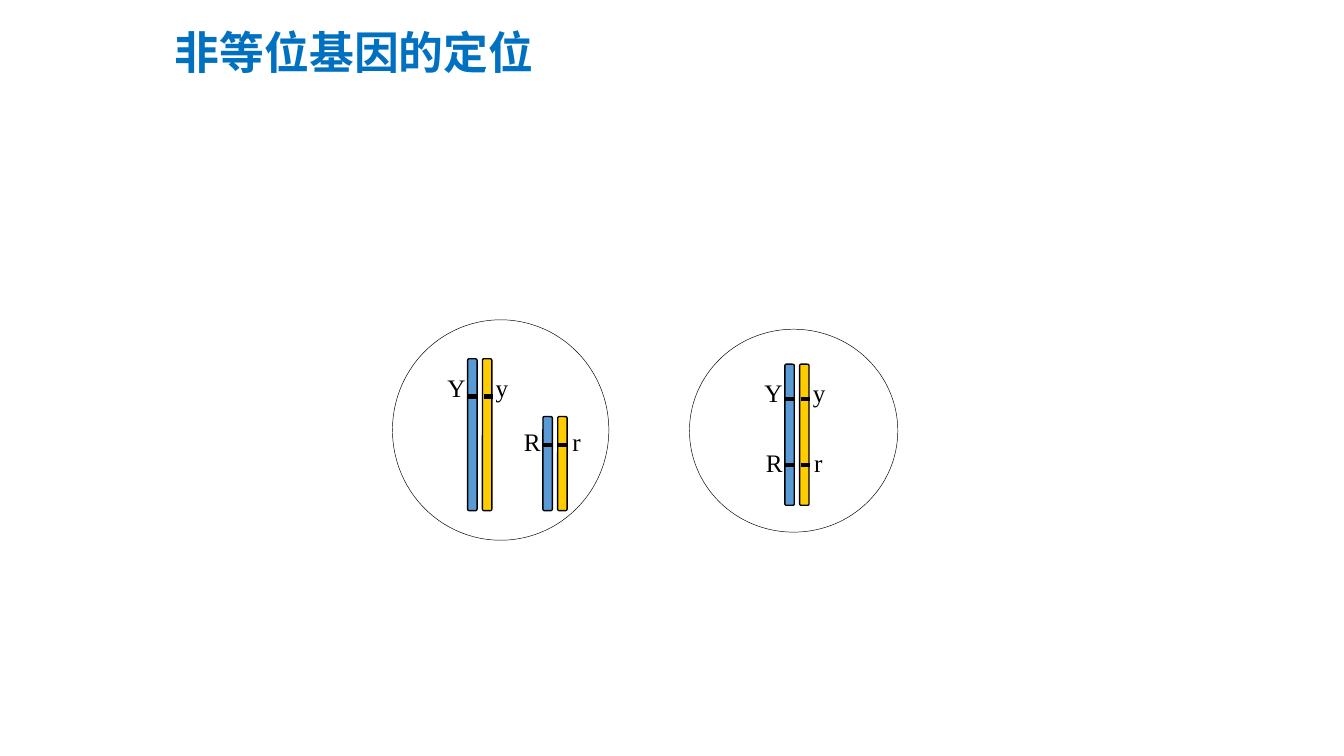
from dataclasses import dataclass

import lxml.etree
import pptx
import pptx.dml.color
import pptx.enum.shapes
import pptx.enum.text
import pptx.oxml.ns
import pptx.shapes.group
import pptx.slide
import pptx.util

SCALE = 9144  # EMU per px, 100 px to the inch
SLIDE_WIDTH = 1000
BLACK = pptx.dml.color.RGBColor(0x00, 0x00, 0x00)
TITLE_BLUE = pptx.dml.color.RGBColor(0x00, 0x70, 0xC0)
CHROMOSOME_BLUE = pptx.dml.color.RGBColor(0x5B, 0x9B, 0xD5)
CHROMOSOME_YELLOW = pptx.dml.color.RGBColor(0xFF, 0xCC, 0x00)
TITLE_FONT = "Noto Sans CJK SC"
GENE_FONT = "Times New Roman"
CHROMOSOME_WIDTH = 7
CHROMOSOME_STEP = 11
ALLELE_TAB = 36
LABEL_HEIGHT = 33


@dataclass(frozen=True)
class Gene:
    alleles: tuple[str, str]
    band_y: int
    band_step: int
    label_left: int
    label_top: int
    label_width: int


@dataclass(frozen=True)
class ChromosomePair:
    left: int
    top: int
    height: int
    genes: tuple[Gene, ...]


@dataclass(frozen=True)
class Cell:
    left: int
    top: int
    width: int
    height: int
    pairs: tuple[ChromosomePair, ...]


CELLS = (
    # Genes on two different chromosome pairs
    Cell(292, 238, 161, 164, (
        ChromosomePair(348, 267, 113, (Gene(("Y", "y"), 295, 12, 323, 272, 67),)),
        ChromosomePair(404, 310, 70, (Gene(("R", "r"), 331, 11, 380, 312, 62),)),
    )),
    # Genes on the same chromosome pair
    Cell(513, 245, 155, 151, (
        ChromosomePair(584, 271, 105, (
            Gene(("Y", "y"), 297, 12, 559, 276, 67),
            Gene(("R", "r"), 346, 12, 560, 328, 62),
        )),
    )),
)


def px(*lengths: int) -> list[pptx.util.Emu]:
    return [pptx.util.Emu(length * SCALE) for length in lengths]


def draw_shape(group: pptx.shapes.group.GroupShape, kind: pptx.enum.shapes.MSO_SHAPE,
               bounds: tuple[int, int, int, int], line_width: float,
               fill: pptx.dml.color.RGBColor | None = None) -> None:
    shape = group.shapes.add_shape(kind, *px(*bounds))
    shape.shadow.inherit = False
    if fill is None:
        shape.fill.background()
    else:
        shape.fill.solid()
        shape.fill.fore_color.rgb = fill
    shape.line.color.rgb = BLACK
    shape.line.width = pptx.util.Pt(line_width)


def draw_band(group: pptx.shapes.group.GroupShape, left: int, y: int) -> None:
    band = group.shapes.add_connector(
        pptx.enum.shapes.MSO_CONNECTOR.STRAIGHT,
        *px(left, y, left + CHROMOSOME_WIDTH, y))
    band.line.color.rgb = BLACK
    band.line.width = pptx.util.Pt(2.25)
    properties = band._element.spPr
    lxml.etree.SubElement(properties, pptx.oxml.ns.qn("a:effectLst"))


def draw_label(group: pptx.shapes.group.GroupShape, gene: Gene) -> None:
    box = group.shapes.add_textbox(
        *px(gene.label_left, gene.label_top, gene.label_width, LABEL_HEIGHT))
    frame = box.text_frame
    frame.word_wrap = True
    frame.margin_right = 0
    para = frame.paragraphs[0]
    para.text = "\t".join(gene.alleles)
    para.alignment = pptx.enum.text.PP_ALIGN.LEFT
    for span in para.runs:
        span.font.name = GENE_FONT
        span.font.size = pptx.util.Pt(13.5)
        span.font.color.rgb = BLACK
    # The tab stop keeps the two alleles on either side of the pair
    properties = para._p.get_or_add_pPr()
    stops = lxml.etree.SubElement(properties, pptx.oxml.ns.qn("a:tabLst"))
    lxml.etree.SubElement(stops, pptx.oxml.ns.qn("a:tab"),
                          pos=str(ALLELE_TAB * SCALE), algn="l")


def draw_pair(group: pptx.shapes.group.GroupShape, pair: ChromosomePair) -> None:
    for index, fill in enumerate((CHROMOSOME_BLUE, CHROMOSOME_YELLOW)):
        left = pair.left + index * CHROMOSOME_STEP
        draw_shape(group, pptx.enum.shapes.MSO_SHAPE.FLOWCHART_ALTERNATE_PROCESS,
                   (left, pair.top, CHROMOSOME_WIDTH, pair.height), 0.75, fill)
    for gene in pair.genes:
        for left in (pair.left, pair.left + gene.band_step):
            draw_band(group, left, gene.band_y)
        draw_label(group, gene)


def draw_title(page: pptx.slide.Slide, text: str) -> None:
    title = page.shapes.title
    title.left, title.top, title.width, title.height = px(18, 9, 491, 55)
    frame = title.text_frame
    frame.text = text
    frame.auto_size = pptx.enum.text.MSO_AUTO_SIZE.NONE
    frame.vertical_anchor = pptx.enum.text.MSO_ANCHOR.BOTTOM
    para = frame.paragraphs[0]
    para.alignment = pptx.enum.text.PP_ALIGN.CENTER
    para.line_spacing = 0.9
    font = para.runs[0].font
    font.name = TITLE_FONT
    font.size = pptx.util.Pt(24)
    font.bold = True
    font.color.rgb = TITLE_BLUE
    # Chinese text takes the East Asian font
    lxml.etree.SubElement(para.runs[0]._r.get_or_add_rPr(),
                          pptx.oxml.ns.qn("a:ea"), typeface=TITLE_FONT)


def main() -> None:
    deck = pptx.Presentation()
    # Widescreen, 16 to 9
    deck.slide_width = pptx.util.Emu(SLIDE_WIDTH * SCALE)
    deck.slide_height = pptx.util.Emu(SLIDE_WIDTH * SCALE * 9 // 16)
    page = deck.slides.add_slide(deck.slide_layouts[5])
    draw_title(page, "非等位基因的定位")

    # Each cell is one group
    for cell in CELLS:
        group = page.shapes.add_group_shape()
        draw_shape(group, pptx.enum.shapes.MSO_SHAPE.OVAL,
                   (cell.left, cell.top, cell.width, cell.height), 0.25)
        for pair in cell.pairs:
            draw_pair(group, pair)

    deck.save("out.pptx")


if __name__ == "__main__":
    main()
